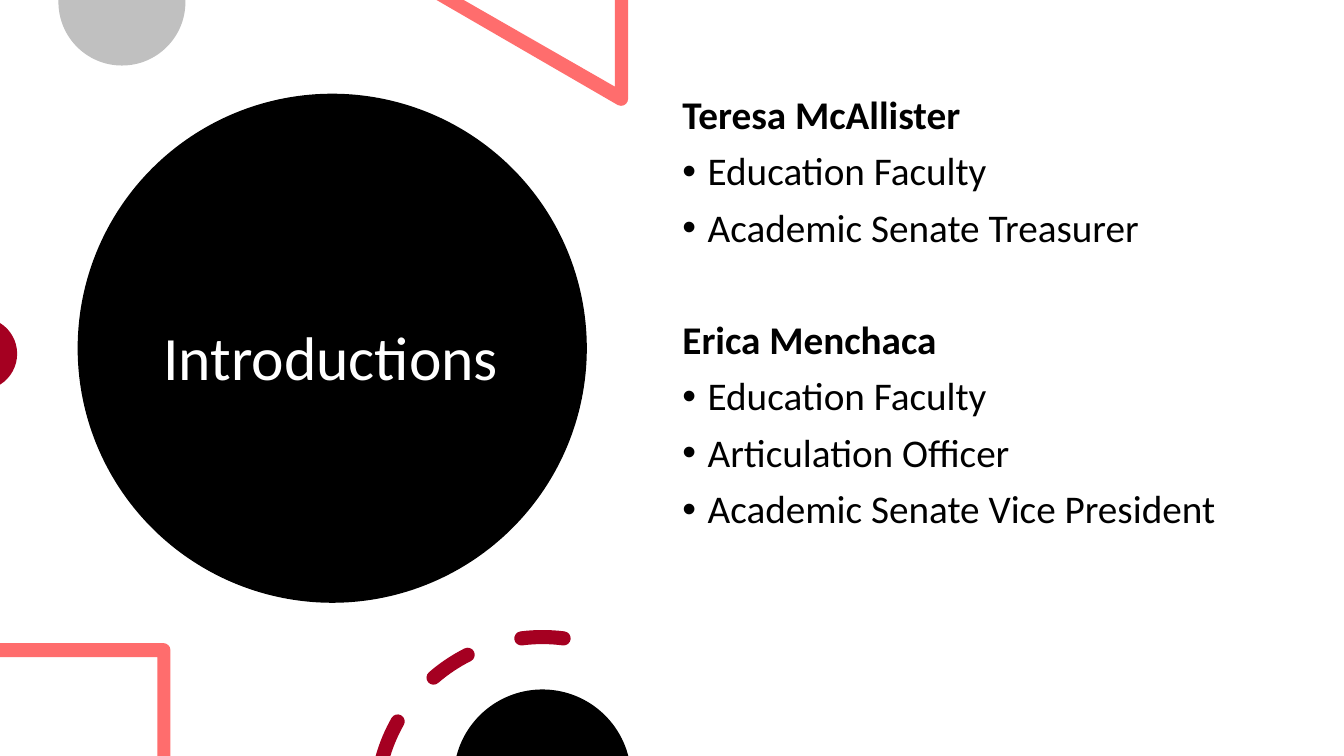
from math import cos, radians, sin, tan

from lxml.etree import SubElement
from pptx import Presentation
from pptx.dml.color import RGBColor
from pptx.enum.shapes import MSO_SHAPE
from pptx.enum.text import MSO_ANCHOR
from pptx.oxml.ns import qn
from pptx.util import Inches, Pt

FONT = "Calibri"
BLACK, WHITE, GRAY = "000000", "FFFFFF", "C0C0C0"
CORAL, CRIMSON = "FF6D6D", "A50021"

RING_X, RING_Y, RING_RADIUS = 5.38, 7.97, 1.65
DASH_RADIUS = 0.07
OUTER, INNER = RING_RADIUS + DASH_RADIUS, RING_RADIUS - DASH_RADIUS

PEOPLE = [
    ("Teresa McAllister", ["Education Faculty", "Academic Senate Treasurer"]),
    ("Erica Menchaca", ["Education Faculty", "Articulation Officer",
                        "Academic Senate Vice President"]),
]


def color(hex_string):
    return RGBColor.from_string(hex_string)


def style_shape(shape, fill):
    shape.shadow.inherit = False
    shape.fill.solid()
    shape.fill.fore_color.rgb = color(fill)
    shape.line.fill.background()


def lines(*points):
    """Straight segments, each held as a tuple of its single end point."""
    return [(point,) for point in points]


def arc(center_x, center_y, radius, *angles):
    """A first point, then one Bezier segment per step between the angles.

    Degrees run clockwise from the right.
    """
    def at(angle, tangent=0):
        a = radians(angle)
        return (center_x + radius * (cos(a) - tangent * sin(a)),
                center_y + radius * (sin(a) + tangent * cos(a)))

    segments = lines(at(angles[0]))
    for start, end in zip(angles, angles[1:]):
        handle = 4 / 3 * tan(radians(end - start) / 4)
        segments.append((at(start, handle), at(end, -handle), at(end)))
    return segments


def ring_arc(radius, *angles):
    return arc(RING_X, RING_Y, radius, *angles)


def dash_cap(angle, turn):
    """Half circle that rounds a dash off where the ring reaches angle."""
    center_x, center_y = ring_arc(RING_RADIUS, angle)[0][0]
    return arc(center_x, center_y, DASH_RADIUS, turn, turn + 90, turn + 180)[1:]


def ring_dash(*angles):
    start, end = angles[0], angles[-1]
    return (ring_arc(OUTER, *angles) + dash_cap(end, end)
            + ring_arc(INNER, end, start)[1:] + dash_cap(start, start + 180))


def cut_dash(outer_start, inner_start, end):
    """Dash that ends flat at the bottom of the slide."""
    return (ring_arc(OUTER, outer_start, end) + dash_cap(end, end)
            + ring_arc(INNER, end, inner_start)[1:])


def bend_line(line, points):
    """Turn a drawn line segment into a Bezier curve through the points."""
    line.tag = qn("a:cubicBezTo")
    line.clear()
    for x, y in points:
        point = SubElement(line, qn("a:pt"))
        point.set("x", str(x))
        point.set("y", str(y))


def add_outline(slide, contours, fill):
    contours = [[[(Inches(x), Inches(y)) for x, y in segment] for segment in contour]
                for contour in contours]
    builder = slide.shapes.build_freeform(*contours[0][0][-1])
    for index, contour in enumerate(contours):
        if index:
            builder.move_to(*contour[0][-1])
        builder.add_line_segments([segment[-1] for segment in contour[1:]], close=True)
    shape = builder.convert_to_shape()
    style_shape(shape, fill)
    drawn = list(shape._element.iter(qn("a:lnTo")))
    segments = [segment for contour in contours for segment in contour[1:]]
    for line, segment in zip(drawn, segments):
        if len(segment) == 3:
            local = [(x - shape.left, y - shape.top) for x, y in segment]
            replacement = SubElement(line.getparent(), qn("a:cubicBezTo"))
            line.getparent().replace(line, replacement)
            bend_line(replacement, local)


def add_text_frame(slide, left, top, width, height, anchor):
    box = slide.shapes.add_textbox(Inches(left), Inches(top), Inches(width), Inches(height))
    frame = box.text_frame
    frame.word_wrap = True
    frame.vertical_anchor = anchor
    return frame


def write_paragraph(paragraph, text, size, hex_string, bold=False, space_before=0):
    paragraph.line_spacing = 0.9
    paragraph.space_before = Pt(space_before)
    run = paragraph.add_run()
    run.text = text
    run.font.name = FONT
    run.font.size = Pt(size)
    run.font.bold = bold
    run.font.color.rgb = color(hex_string)


def add_bullet(paragraph):
    properties = paragraph._p.get_or_add_pPr()
    properties.set("marL", str(Inches(0.25)))
    properties.set("indent", str(Inches(-0.25)))
    SubElement(properties, qn("a:buFont")).set("typeface", "Arial")
    SubElement(properties, qn("a:buChar")).set("char", "•")


def add_title(slide):
    circle = slide.shapes.add_shape(
        MSO_SHAPE.OVAL, Inches(0.77), Inches(0.93), Inches(5.05), Inches(5.05))
    style_shape(circle, BLACK)
    frame = add_text_frame(slide, 1.52, 1.35, 3.54, 4.45, MSO_ANCHOR.MIDDLE)
    write_paragraph(frame.paragraphs[0], "Introductions", 44, WHITE)


def add_people(slide):
    frame = add_text_frame(slide, 6.67, 0.9, 5.75, 5.35, MSO_ANCHOR.TOP)
    for index, (name, roles) in enumerate(PEOPLE):
        heading = frame.add_paragraph() if index else frame.paragraphs[0]
        write_paragraph(heading, name, 28, BLACK, bold=True,
                        space_before=50 if index else 10)
        for role in roles:
            paragraph = frame.add_paragraph()
            write_paragraph(paragraph, role, 28, BLACK, space_before=10)
            add_bullet(paragraph)


def add_upper_decorations(slide):
    gray_disc = lines((1.84, 0)) + arc(1.21, 0.02, 0.63, 0, 90, 180) + lines((0.58, 0))
    triangle = (lines((6.23, 0), (6.1, 0), (6.1, 0.86), (4.6, 0), (4.33, 0))
                + arc(6.16, 0.98, 0.07, 117, 90, 0))
    add_outline(slide, [gray_disc], GRAY)
    add_outline(slide, [triangle], CORAL)
    add_outline(slide, [arc(-0.19, 3.51, 0.36, -58.1, 0, 58.1)], CRIMSON)


def add_lower_decorations(slide):
    square = (lines((0, 6.52), (0, 6.38)) + arc(1.62, 6.45, 0.07, 270, 360)
              + lines((1.69, 7.5), (1.56, 7.5), (1.56, 6.52)))
    dashes = [cut_dash(195.9, 197.3, 209.5), ring_dash(229.1, 243.3),
              ring_dash(262.7, 270, 277.3)]
    add_outline(slide, [square], CORAL)
    add_outline(slide, dashes, CRIMSON)
    add_outline(slide, [arc(RING_X, 7.72, 0.88, 194.5, 270, 345.5)], BLACK)


def main():
    presentation = Presentation()
    presentation.slide_width = Inches(13.33)
    presentation.slide_height = Inches(7.5)
    slide = presentation.slides.add_slide(presentation.slide_layouts[6])
    add_title(slide)
    add_upper_decorations(slide)
    add_people(slide)
    add_lower_decorations(slide)
    presentation.save("out.pptx")


if __name__ == "__main__":
    main()
